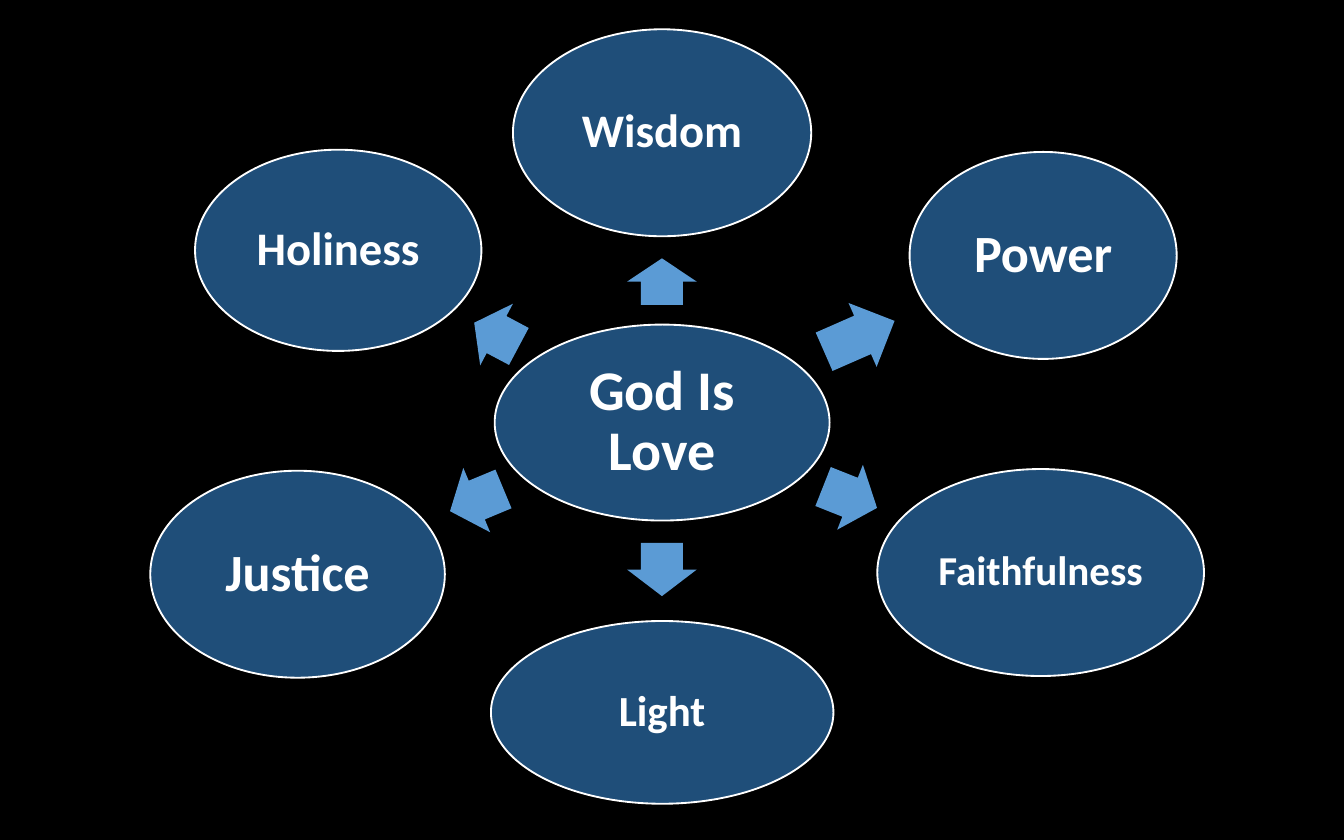
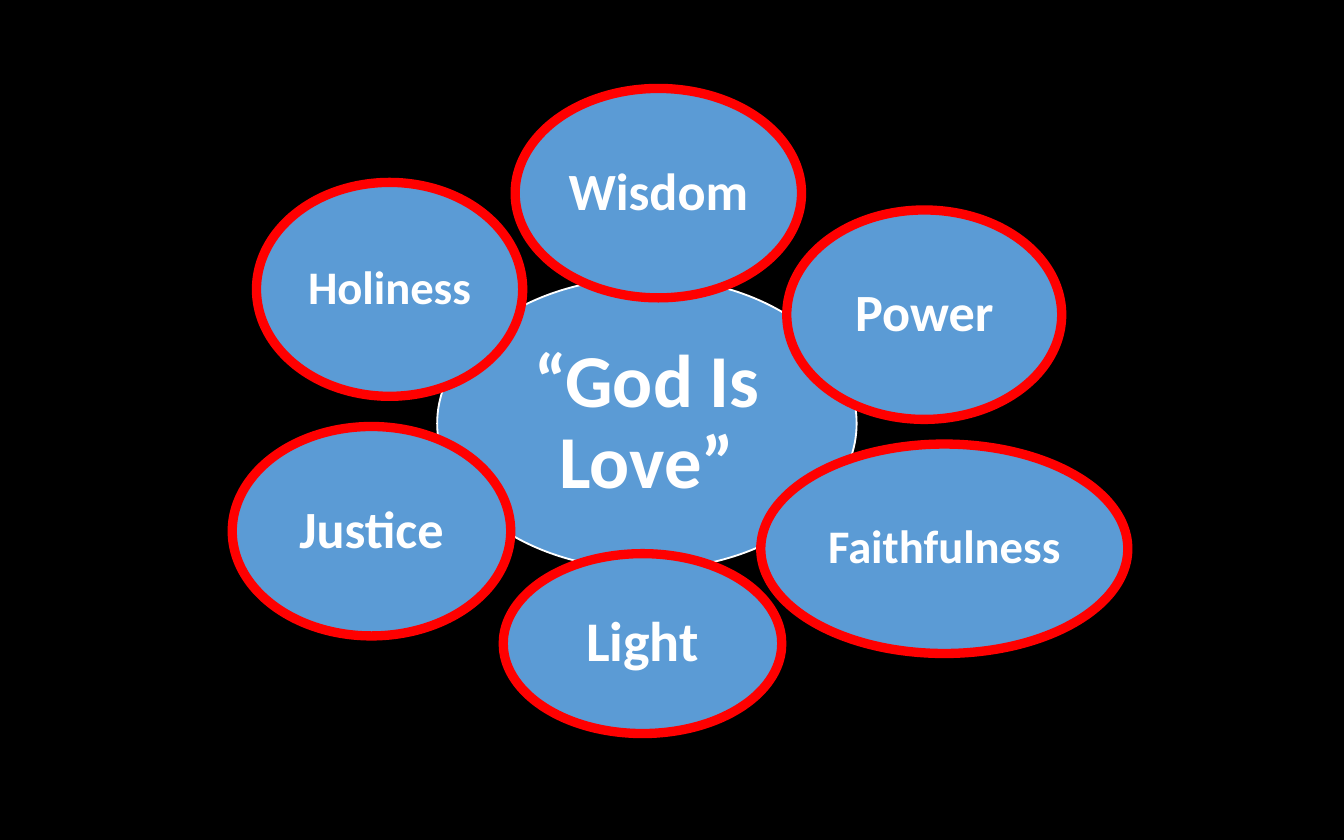
"""Build two slides showing the attributes that surround God's love."""
from pptx import Presentation
from pptx.dml.color import RGBColor
from pptx.enum.shapes import MSO_SHAPE
from pptx.enum.text import MSO_ANCHOR, PP_ALIGN
from pptx.util import Pt

OVAL = MSO_SHAPE.OVAL
ARROW = MSO_SHAPE.RIGHT_ARROW
MIDDLE = MSO_ANCHOR.MIDDLE
CENTER = PP_ALIGN.CENTER

BLACK = RGBColor(0x00, 0x00, 0x00)
WHITE = RGBColor(0xFF, 0xFF, 0xFF)
RED = RGBColor(0xFF, 0x00, 0x00)
NAVY = RGBColor(0x1F, 0x4E, 0x79)
SKY = RGBColor(0x5B, 0x9B, 0xD5)

ARROW_HEIGHT = 37.4
LABEL_FONT = {"name": "Calibri", "bold": True}


def add_filled(slide, preset, left, top, width, height, fill):
    shape = slide.shapes.add_shape(preset, Pt(left), Pt(top), Pt(width), Pt(height))
    shape.shadow.inherit = False
    shape.fill.solid()
    shape.fill.fore_color.rgb = fill
    return shape


def add_attribute(slide, label, size, bounds, fill, outline, outline_width):
    oval = add_filled(slide, OVAL, *bounds, fill)
    oval.line.color.rgb = outline
    oval.line.width = Pt(outline_width)
    frame = oval.text_frame
    inset = Pt(size / 10)
    frame_format = {
        "word_wrap": True, "vertical_anchor": MIDDLE,
        "margin_left": inset, "margin_right": inset,
        "margin_top": inset, "margin_bottom": inset,
    }
    for name, value in frame_format.items():
        setattr(frame, name, value)
    paragraph = frame.paragraphs[0]
    paragraph.alignment = CENTER
    paragraph.line_spacing = 0.9
    run = paragraph.add_run()
    run.text = label
    for name, value in {**LABEL_FONT, "size": Pt(size)}.items():
        setattr(run.font, name, value)
    run.font.color.rgb = WHITE


radiating = [
    ("Wisdom", 25, (274.8, 15.7, 159.8, 110.9)),
    ("Power", 28, (487.3, 81.4, 143.1, 110.9)),
    ("Faithfulness", 22, (470, 251.3, 175, 110.9)),
    ("Light", 23, (263, 332.7, 183.5, 97.9)),
    ("Justice", 28, (80.5, 252.2, 157.8, 110.9)),
    ("Holiness", 25, (104.5, 80.2, 153.4, 107.8)),
    ("God Is Love", 30, (265, 173.9, 179.4, 105)),
]
overlapping = [
    ("“God Is Love”", 40, (234.2, 148.7, 224.7, 156.4)),
    ("Wisdom", 28, (276, 47.4, 153.4, 112.2)),
    ("Power", 28, (421.5, 112.5, 147.3, 112.2)),
    ("Faithfulness", 25, (407.6, 237.9, 196.6, 112.2)),
    ("Light", 30, (269.6, 296.6, 149.2, 96.4)),
    ("Justice", 28, (124.4, 228.5, 149.2, 112.2)),
    ("Holiness", 25, (137.4, 97.7, 142.6, 114.6)),
]
arrows = [
    (354.6, 150.9, 25, 270),
    (460.4, 180.2, 41.2, 336.3),
    (455.4, 266.4, 31.1, 21.6),
    (354.6, 305.1, 28.5, 90),
    (255.4, 267.9, 31, 157.4),
    (266, 179.2, 27.1, 208),
]

prs = Presentation()
prs.slide_width = Pt(720)
prs.slide_height = Pt(450)
blank = prs.slide_layouts[6]

background = prs.slide_master.background.fill
background.solid()
background.fore_color.rgb = BLACK

for attributes, fill, petal_outline, petal_width, directions in (
    (radiating, NAVY, WHITE, 1, arrows),
    (overlapping, SKY, RED, 5, []),
):
    slide = prs.slides.add_slide(blank)
    for label, size, bounds in attributes:
        is_core = "God" in label
        outline, outline_width = (WHITE, 1) if is_core else (petal_outline, petal_width)
        add_attribute(slide, label, size, bounds, fill, outline, outline_width)
    for center_x, center_y, length, angle in directions:
        left = center_x - length / 2
        top = center_y - ARROW_HEIGHT / 2
        arrow = add_filled(slide, ARROW, left, top, length, ARROW_HEIGHT, SKY)
        arrow.line.fill.background()
        arrow.adjustments[0] = 0.6
        arrow.adjustments[1] = 0.5
        arrow.rotation = angle

prs.save("out.pptx")
